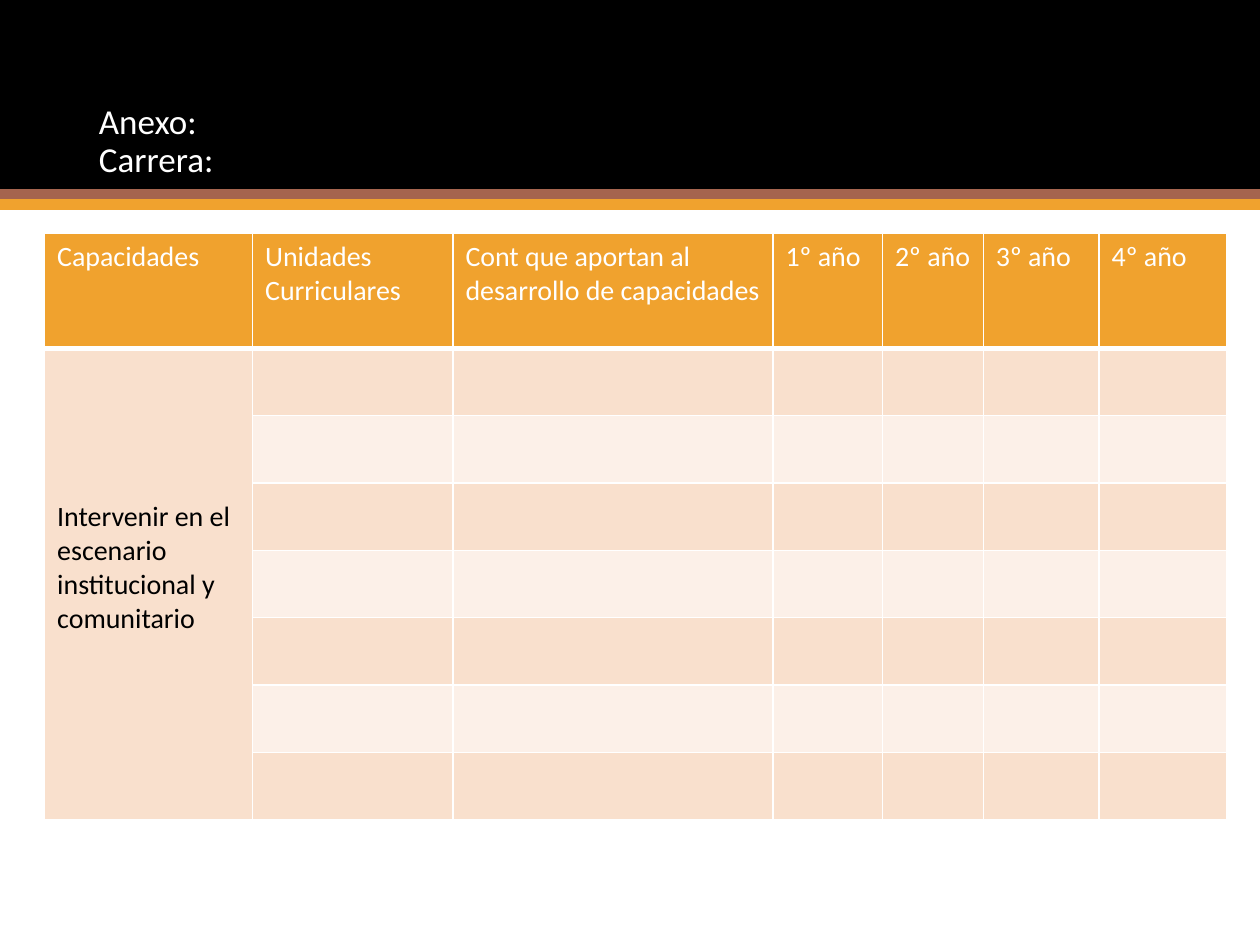
"""Build the slide with the table of capacities by career year."""
import lxml.etree
import pptx
import pptx.dml.color
import pptx.enum.shapes
import pptx.enum.text
import pptx.oxml.ns
import pptx.util

Pt = pptx.util.Pt
qn = pptx.oxml.ns.qn


def color(value):
    return pptx.dml.color.RGBColor.from_string(value)


def style_text(frame, size, value):
    for paragraph in frame.paragraphs:
        for run in paragraph.runs:
            run.font.name = "Calibri"
            run.font.size = Pt(size)
            run.font.color.rgb = color(value)


presentation = pptx.Presentation()
presentation.slide_width = Pt(720)
presentation.slide_height = Pt(540)
slide = presentation.slides.add_slide(presentation.slide_layouts[6])

for top, height, fill in [(0, 108, "000000"), (108, 6.2, "A5644E"), (113.8, 6.2, "F0A22E")]:
    band = slide.shapes.add_shape(
        pptx.enum.shapes.MSO_SHAPE.RECTANGLE, 0, Pt(top), Pt(720), Pt(height))
    band.shadow.inherit = False
    band.fill.solid()
    band.fill.fore_color.rgb = color(fill)
    band.line.fill.background()

title = slide.shapes.add_textbox(Pt(49.5), Pt(28.8), Pt(621), Pt(104.4)).text_frame
title.word_wrap = True
title.vertical_anchor = pptx.enum.text.MSO_ANCHOR.MIDDLE
title.text = "Anexo:\vCarrera:"
title.paragraphs[0].line_spacing = 0.9
style_text(title, 20, "FFFFFF")

headings = ["Capacidades", "Unidades Curriculares",
            "Cont que aportan al desarrollo de capacidades",
            "1º año", "2º año", "3º año", "4º año"]
column_widths = [118.8, 114.5, 182.9, 62.6, 57.6, 66.2, 72.8]
row_heights = [65.5] + [38.5] * 7

capacities = slide.shapes.add_table(
    len(row_heights), len(headings), Pt(25.5), Pt(133.5),
    Pt(sum(column_widths)), Pt(sum(row_heights))).table
for column, width in zip(capacities.columns, column_widths):
    column.width = Pt(width)
for row, height in zip(capacities.rows, row_heights):
    row.height = Pt(height)

for row_index, row in enumerate(capacities.rows):
    if row_index == 0:
        fill = "F0A22E"
    else:
        fill = "F9E0CD" if row_index % 2 else "FCF0E8"
    edges = {"L": 1, "R": 1, "T": 3 if row_index == 1 else 1, "B": 3 if row_index == 0 else 1}
    for cell in row.cells:
        properties = cell._tc.get_or_add_tcPr()
        for edge, width in edges.items():
            border = lxml.etree.SubElement(properties, qn(f"a:ln{edge}"), w=str(Pt(width)))
            solid = lxml.etree.SubElement(border, qn("a:solidFill"))
            lxml.etree.SubElement(solid, qn("a:srgbClr"), val="FFFFFF")
        cell.fill.solid()
        cell.fill.fore_color.rgb = color(fill)

for column_index, heading in enumerate(headings):
    heading_cell = capacities.cell(0, column_index)
    heading_cell.text_frame.text = heading
    style_text(heading_cell.text_frame, 16, "FFFFFF")

capacity = capacities.cell(1, 0)
capacity.merge(capacities.cell(7, 0))
capacity.margin_top = Pt(86.5)
capacity.text_frame.text = "Intervenir en el escenario institucional y comunitario"
style_text(capacity.text_frame, 16, "000000")

presentation.save("out.pptx")
